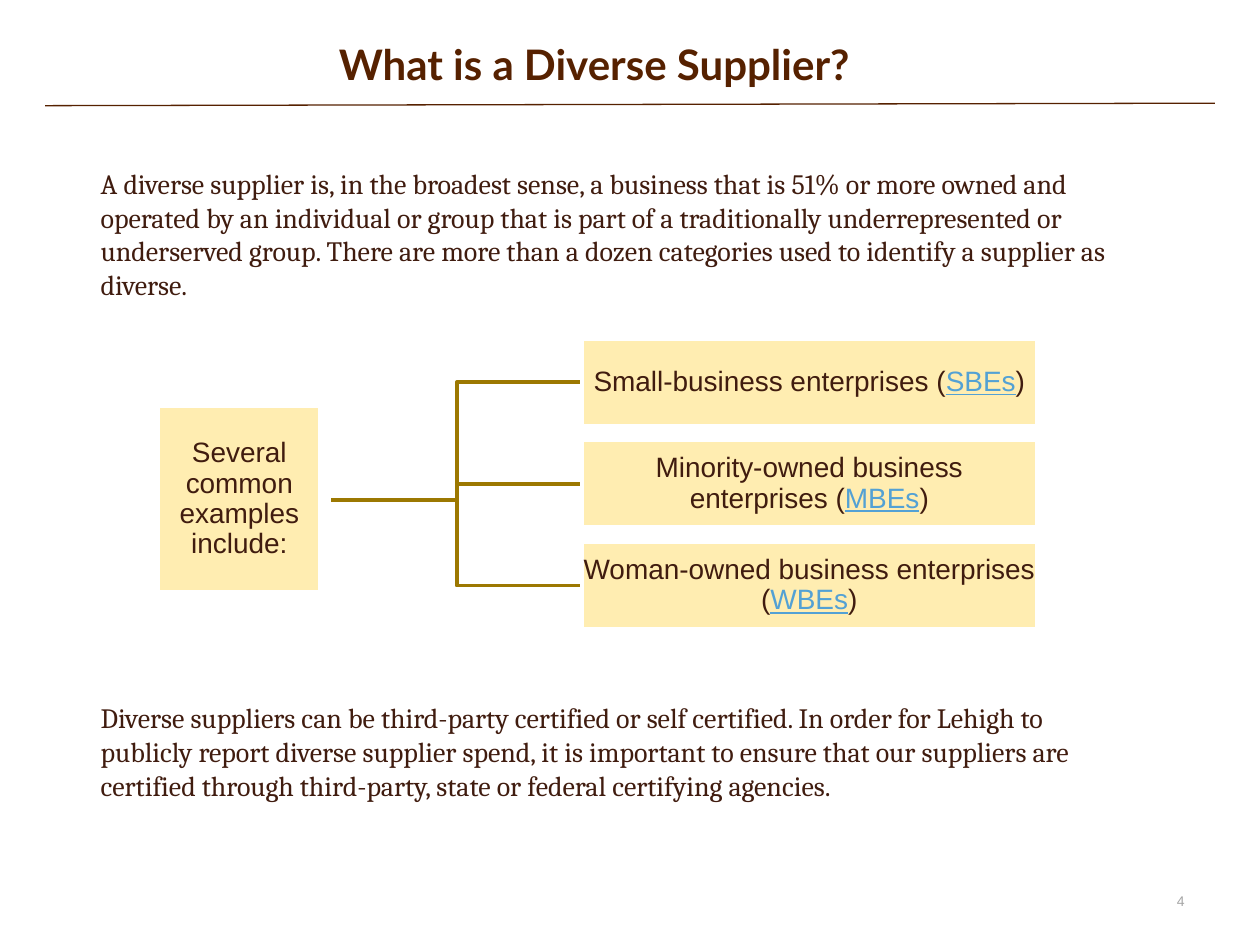
from pptx import Presentation
from pptx.dml.color import RGBColor
from pptx.enum.shapes import MSO_CONNECTOR as CONN, MSO_SHAPE as SHAPE
from pptx.enum.text import MSO_ANCHOR as ANCHOR, PP_ALIGN as ALIGN
from pptx.oxml.ns import qn
from pptx.util import Cm, Pt
from lxml.etree import SubElement

COLORS = {"title": "562100", "text": "401C0F", "link": "53A1D4", "box": "FFEDB1",
          "edge": "FFFFFF", "branch": "9C7801", "number": "A5A5A5"}
TITLE = {"name": "Lato", "size": Pt(24), "bold": True}
BODY = {"name": "Cambria", "size": Pt(16)}
LABEL = {"name": "Arial", "size": Pt(16)}
LINK = {**LABEL, "underline": True}
NUMBER = {"name": "Arial", "size": Pt(8)}

INTRO = ("A diverse supplier is, in the broadest sense, a business that is 51% or more owned "
         "and operated by an individual or group that is part of a traditionally "
         "underrepresented or underserved group. There are more than a dozen categories "
         "used to identify a supplier as diverse.")
CLOSING = ("Diverse suppliers can be third-party certified or self certified. In order for "
           "Lehigh to publicly report diverse supplier spend, it is important to ensure that "
           "our suppliers are certified through third-party, state or federal certifying "
           "agencies.")
EXAMPLES = [("Small-business enterprises (", "SBEs"),
            ("Minority-owned business enterprises (", "MBEs"),
            ("Woman-owned business enterprises (", "WBEs")]
BOX_X, BOX_Y, BOX_W, BOX_H, PITCH = 11.73, 6.83, 9.17, 1.75, 2.05
ROOT_X, ROOT_Y, TRUNK_X = 6.68, 10.08, 9.21


def rgb(key):
    """Return the named colour."""
    return RGBColor.from_string(COLORS[key])


def add_run(p, text, fmt, color):
    """Append a formatted run to a paragraph."""
    r = p.add_run()
    r.text = text
    for name, value in fmt.items():
        setattr(r.font, name, value)
    r.font.color.rgb = rgb(color)


def set_frame(tf, anchor, inset_x, inset_y):
    """Set wrapping, anchor and insets of a text frame."""
    values = {"word_wrap": True, "vertical_anchor": anchor,
              "margin_left": Cm(inset_x), "margin_right": Cm(inset_x),
              "margin_top": Cm(inset_y), "margin_bottom": Cm(inset_y)}
    for name, value in values.items():
        setattr(tf, name, value)


def add_title(s, text):
    """Fill and place the title placeholder."""
    sp = s.shapes.title
    sp.left, sp.top, sp.width, sp.height = Cm(6.58), Cm(0.53), Cm(17.22), Cm(2.11)
    set_frame(sp.text_frame, ANCHOR.TOP, 0.25, 0.25)
    p = sp.text_frame.paragraphs[0]
    p.alignment = ALIGN.LEFT
    add_run(p, text, TITLE, "title")


def add_rule(s):
    """Draw the thin line below the title."""
    line = s.shapes.add_connector(CONN.STRAIGHT, Cm(0.91), Cm(2.13), Cm(24.49), Cm(2.08))
    line.line.color.rgb = rgb("title")
    line.line.width = Pt(0.75)
    SubElement(line._element.spPr, qn("a:effectLst"))


def add_text(s, x, y, w, h, text, fmt, color, align=ALIGN.LEFT, anchor=ANCHOR.TOP):
    """Add a wrapped text box with one paragraph."""
    tf = s.shapes.add_textbox(Cm(x), Cm(y), Cm(w), Cm(h)).text_frame
    set_frame(tf, anchor, 0.25, 0.13)
    p = tf.paragraphs[0]
    p.alignment = align
    add_run(p, text, fmt, color)


def add_box(s, x, y, w, h, runs):
    """Add a filled box with centred runs."""
    sp = s.shapes.add_shape(SHAPE.RECTANGLE, Cm(x), Cm(y), Cm(w), Cm(h))
    sp.shadow.inherit = False
    sp.fill.solid()
    sp.fill.fore_color.rgb = rgb("box")
    sp.line.color.rgb = rgb("edge")
    sp.line.width = Pt(2)
    set_frame(sp.text_frame, ANCHOR.MIDDLE, 0.03, 0.03)
    p = sp.text_frame.paragraphs[0]
    p.alignment = ALIGN.CENTER
    p.line_spacing = 0.9
    for text, fmt, color in runs:
        add_run(p, text, fmt, color)


def add_branch(s, y):
    """Draw an elbow from the root to the height of one example."""
    builder = s.shapes.build_freeform(Cm(ROOT_X), Cm(ROOT_Y))
    points = [(TRUNK_X, ROOT_Y), (TRUNK_X, y), (BOX_X, y)]
    builder.add_line_segments([(Cm(px), Cm(py)) for px, py in points], close=False)
    sp = builder.convert_to_shape()
    sp.shadow.inherit = False
    sp.fill.background()
    sp.line.color.rgb = rgb("branch")
    sp.line.width = Pt(2)


def add_tree(s):
    """Draw the branches, the root box and the example boxes."""
    tops = [BOX_Y + i * PITCH for i in range(len(EXAMPLES))]
    for top in reversed(tops):
        add_branch(s, top + BOX_H / 2)
    add_box(s, 3.2, 8.2, 3.25, 3.73, [("Several common examples include:", LABEL, "text")])
    for top, (label, short) in zip(tops, EXAMPLES):
        runs = [(label, LABEL, "text"), (short, LINK, "link"), (")", LABEL, "text")]
        add_box(s, BOX_X, top, BOX_W, BOX_H, runs)


def main():
    """Build and save the slide."""
    prs = Presentation()
    prs.slide_width, prs.slide_height = Cm(25.4), Cm(19.05)
    s = prs.slides.add_slide(prs.slide_layouts[5])
    add_rule(s)
    add_text(s, 18.21, 17.65, 5.92, 1.02, "4", NUMBER, "number", ALIGN.RIGHT, ANCHOR.MIDDLE)
    add_title(s, "What is a Diverse Supplier?")
    add_tree(s)
    add_text(s, 1.78, 3.23, 21.31, 3.58, INTRO, BODY, "text")
    add_text(s, 1.78, 14, 21.31, 2.9, CLOSING, BODY, "text")
    prs.save("out.pptx")


if __name__ == "__main__":
    main()
